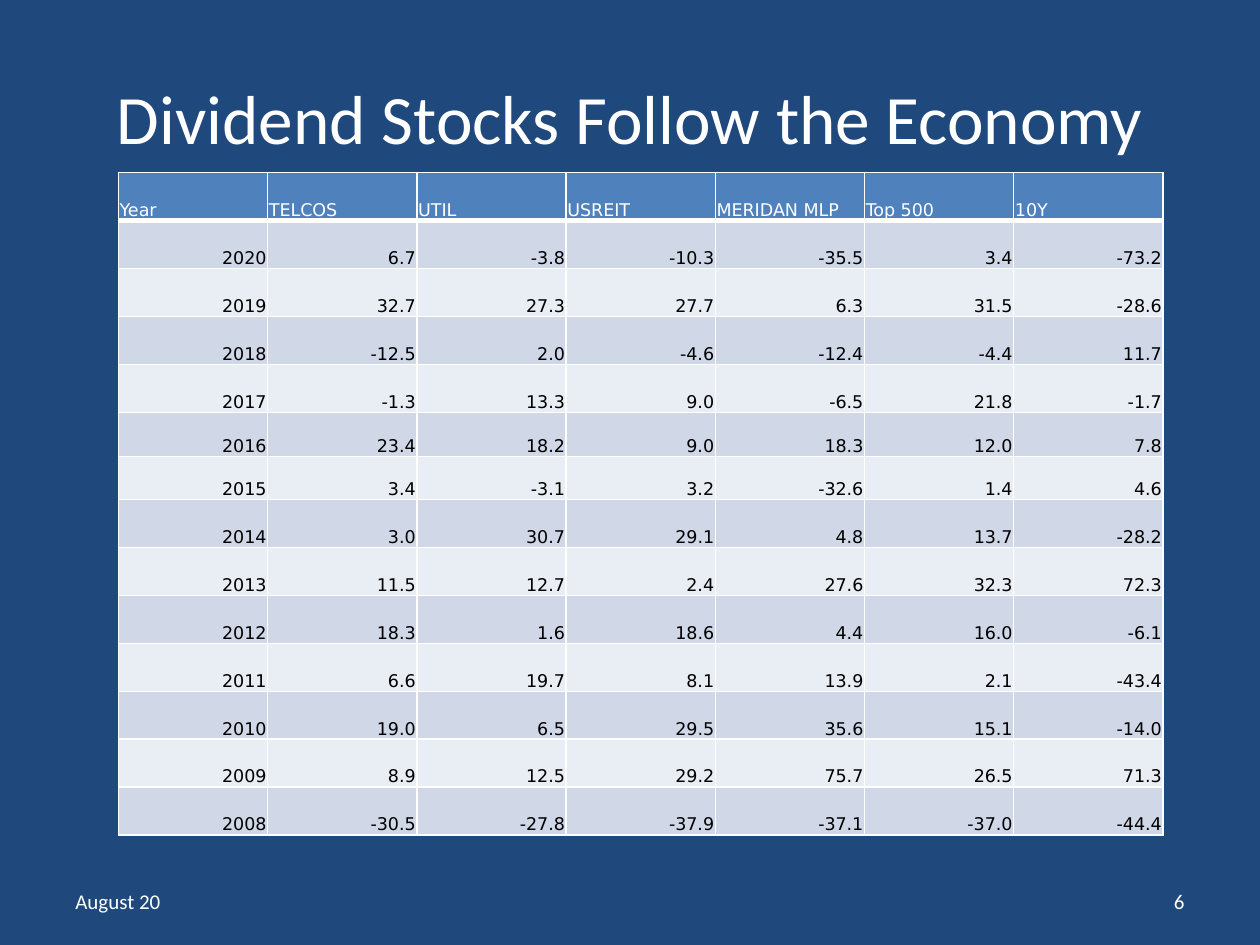
"""Build a slide with a table of yearly dividend stock returns."""
import pptx
import pptx.dml.color
import pptx.enum.text
import pptx.oxml
import pptx.oxml.ns
import pptx.util

Inches = pptx.util.Inches
ALIGN = pptx.enum.text.PP_ALIGN
ANCHOR = pptx.enum.text.MSO_ANCHOR

TITLE = "Dividend Stocks Follow the Economy"
HEADERS = ["Year", "TELCOS", "UTIL", "USREIT", "MERIDAN MLP", "Top 500", "10Y"]
RETURNS = [
    (2020, 6.7, -3.8, -10.3, -35.5, 3.4, -73.2),
    (2019, 32.7, 27.3, 27.7, 6.3, 31.5, -28.6),
    (2018, -12.5, 2.0, -4.6, -12.4, -4.4, 11.7),
    (2017, -1.3, 13.3, 9.0, -6.5, 21.8, -1.7),
    (2016, 23.4, 18.2, 9.0, 18.3, 12.0, 7.8),
    (2015, 3.4, -3.1, 3.2, -32.6, 1.4, 4.6),
    (2014, 3.0, 30.7, 29.1, 4.8, 13.7, -28.2),
    (2013, 11.5, 12.7, 2.4, 27.6, 32.3, 72.3),
    (2012, 18.3, 1.6, 18.6, 4.4, 16.0, -6.1),
    (2011, 6.6, 19.7, 8.1, 13.9, 2.1, -43.4),
    (2010, 19.0, 6.5, 29.5, 35.6, 15.1, -14.0),
    (2009, 8.9, 12.5, 29.2, 75.7, 26.5, 71.3),
    (2008, -30.5, -27.8, -37.9, -37.1, -37.0, -44.4),
]
FOOTERS = [("August 20", 0.5, ALIGN.LEFT), ("6", 7.17, ALIGN.RIGHT)]
TABLE_BOX = (0.94, 1.37, 8.29, 5.26)
SHORT_ROWS = {5: 0.35, 6: 0.34}
THEME = {
    "background": "1F497D", "header": "4F81BD", "bands": ("D0D8E8", "E9EDF4"),
    "light": "FFFFFF", "dark": "000000",
    "font": "Calibri", "table_font": "DejaVu Sans",
    "title_size": 39.6, "table_size": 10, "footer_size": 12,
    "border": 1, "header_border": 3,
}


def color(value):
    return pptx.dml.color.RGBColor.from_string(value)


def write(text_frame, text, size, font, ink, alignment):
    text_frame.text = text
    paragraph = text_frame.paragraphs[0]
    paragraph.alignment = alignment
    run_font = paragraph.runs[0].font
    run_font.size = pptx.util.Pt(size)
    run_font.name = font
    run_font.color.rgb = color(ink)


def set_borders(cell, top, bottom):
    properties = cell._tc.get_or_add_tcPr()
    widths = {"L": THEME["border"], "R": THEME["border"], "T": top, "B": bottom}
    for index, (side, width) in enumerate(widths.items()):
        line = pptx.oxml.parse_xml(
            f'<a:ln{side} {pptx.oxml.ns.nsdecls("a")} w="{pptx.util.Pt(width)}">'
            f'<a:solidFill><a:srgbClr val="{THEME["light"]}"/></a:solidFill></a:ln{side}>'
        )
        properties.insert(index, line)


def add_title(slide):
    title = slide.shapes.title
    title.left, title.top, title.width, title.height = map(Inches, (0.5, 0.3, 9, 1.25))
    title.text_frame.vertical_anchor = ANCHOR.MIDDLE
    write(title.text_frame, TITLE, THEME["title_size"], THEME["font"], THEME["light"], ALIGN.CENTER)


def add_returns_table(slide):
    rows = [HEADERS] + [[str(value) for value in row] for row in RETURNS]
    frame = slide.shapes.add_table(len(rows), len(HEADERS), *map(Inches, TABLE_BOX))
    table = frame.table
    regular_height = (TABLE_BOX[3] - sum(SHORT_ROWS.values())) / (len(rows) - len(SHORT_ROWS))
    for column in table.columns:
        column.width = Inches(TABLE_BOX[2] / len(HEADERS))
    for row_index, values in enumerate(rows):
        table.rows[row_index].height = Inches(SHORT_ROWS.get(row_index, regular_height))
        is_header = row_index == 0
        fill = THEME["header"] if is_header else THEME["bands"][(row_index - 1) % 2]
        ink = THEME["light"] if is_header else THEME["dark"]
        alignment = ALIGN.LEFT if is_header else ALIGN.RIGHT
        top = THEME["header_border"] if row_index == 1 else THEME["border"]
        bottom = THEME["header_border"] if is_header else THEME["border"]
        for column_index, value in enumerate(values):
            cell = table.cell(row_index, column_index)
            cell.margin_left = cell.margin_right = cell.margin_top = Inches(0.01)
            cell.margin_bottom = 0
            cell.vertical_anchor = ANCHOR.BOTTOM
            cell.fill.solid()
            cell.fill.fore_color.rgb = color(fill)
            write(cell.text_frame, value, THEME["table_size"], THEME["table_font"], ink, alignment)
            set_borders(cell, top, bottom)


def add_footers(slide):
    for text, left, alignment in FOOTERS:
        box = slide.shapes.add_textbox(*map(Inches, (left, 6.95, 2.33, 0.4)))
        box.text_frame.word_wrap = True
        box.text_frame.vertical_anchor = ANCHOR.MIDDLE
        write(box.text_frame, text, THEME["footer_size"], THEME["font"], THEME["light"], alignment)


def main():
    presentation = pptx.Presentation()
    presentation.slide_width, presentation.slide_height = Inches(10), Inches(7.5)
    slide = presentation.slides.add_slide(presentation.slide_layouts[5])
    slide.background.fill.solid()
    slide.background.fill.fore_color.rgb = color(THEME["background"])
    add_title(slide)
    add_returns_table(slide)
    add_footers(slide)
    presentation.save("out.pptx")


if __name__ == "__main__":
    main()
